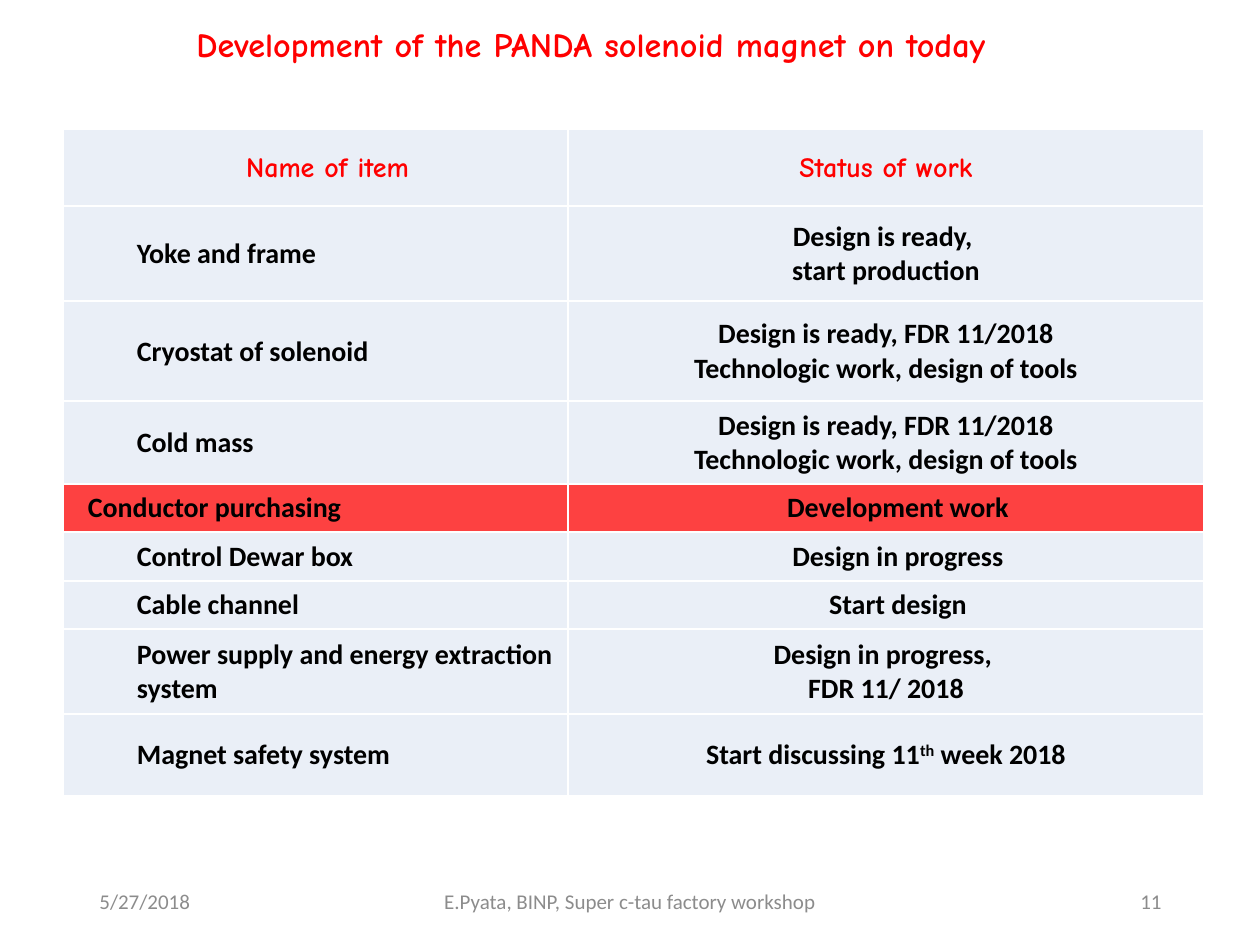
from lxml import etree
from pptx import Presentation
from pptx.dml.color import RGBColor
from pptx.enum.text import MSO_ANCHOR, PP_ALIGN
from pptx.oxml.ns import qn
from pptx.util import Pt

PX = 914400 / 126
RED = RGBColor(0xFF, 0x00, 0x00)
ALERT = RGBColor(0xFD, 0x41, 0x41)
PALE = RGBColor(0xEA, 0xEF, 0xF7)
BLACK = RGBColor(0x00, 0x00, 0x00)
GREY = RGBColor(0x8C, 0x8C, 0x8C)
LEFT, MID, RIGHT = PP_ALIGN.LEFT, PP_ALIGN.CENTER, PP_ALIGN.RIGHT
MIDDLE, TOP = MSO_ANCHOR.MIDDLE, MSO_ANCHOR.TOP
BODY, HAND = "Calibri", "Comic Neue"

COLS = [505, 636]
INSET, INDENT = 25, 49
TOOLS = "Design is ready, FDR 11/2018\nTechnologic work, design of tools"
# height, item, status, left inset of the status cell
ROWS = [
    (77, "Name of item", "Status of work", 1),
    (95, "Yoke and frame", "Design is ready, \nstart production", 1),
    (100, "Cryostat of solenoid", TOOLS, 1),
    (83, "Cold mass", TOOLS, 1),
    (48, "Conductor purchasing", "Development work", INSET),
    (49, "Control Dewar box", "Design in progress", INSET),
    (48, "Cable channel", "Start design", INSET),
    (85, "Power supply and energy extraction system",
     "Design in progress, \nFDR 11/ 2018", 1),
    (82, "Magnet safety system", "Start discussing 11^th^ week 2018", 1),
]
HEAD, URGENT = 0, 4


def px(n):
    return round(n * PX)


def style(para, size, color, face=BODY, bold=False, align=LEFT):
    para.alignment = align
    font = para.font
    font.size, font.name, font.bold = Pt(size), face, bold
    font.color.rgb = color


def add_text(slide, box, text, size, color, anchor=MIDDLE, **look):
    frame = slide.shapes.add_textbox(*map(px, box)).text_frame
    frame.word_wrap = True
    frame.vertical_anchor = anchor
    para = frame.paragraphs[0]
    para.text = text
    style(para, size, color, **look)
    return para


def add_runs(para, text):
    """Write text into para, raising what stands between carets."""
    for i, part in enumerate(text.split("^")):
        run = para.add_run()
        run.text = part
        if i % 2:
            run._r.get_or_add_rPr().set("baseline", "30000")


def add_edges(cell):
    props = cell._tc.get_or_add_tcPr()
    for i, side in enumerate(("lnL", "lnR", "lnT", "lnB")):
        line = etree.Element(qn("a:" + side), w=str(Pt(1)))
        fill = etree.SubElement(line, qn("a:solidFill"))
        etree.SubElement(fill, qn("a:srgbClr"), val="FFFFFF")
        props.insert(i, line)


def fill_cell(cell, text, fill, inset, color, face, align, indent=0):
    cell.fill.solid()
    cell.fill.fore_color.rgb = fill
    add_edges(cell)
    cell.vertical_anchor = MIDDLE
    cell.margin_left, cell.margin_right = px(inset), px(1)
    cell.margin_top, cell.margin_bottom = px(1), 0
    frame = cell.text_frame
    for i, line in enumerate(text.split("\n")):
        para = frame.add_paragraph() if i else frame.paragraphs[0]
        add_runs(para, line)
        style(para, 16, color, face, True, align)
        if indent:
            para._p.get_or_add_pPr().set("marL", str(px(indent)))
            para._p.get_or_add_pPr().set("indent", "0")


def add_status(slide):
    high = sum(row[0] for row in ROWS)
    frame = slide.shapes.add_table(len(ROWS), len(COLS), px(63), px(129),
                                   px(sum(COLS)), px(high))
    table = frame.table
    table.first_row = table.horz_banding = False
    for col, width in zip(table.columns, COLS):
        col.width = px(width)
    for i, (height, item, status, inset) in enumerate(ROWS):
        table.rows[i].height = px(height)
        fill = ALERT if i == URGENT else PALE
        color, face = (RED, HAND) if i == HEAD else (BLACK, BODY)
        align = MID if i == HEAD else LEFT
        indent = 0 if i in (HEAD, URGENT) else INDENT
        fill_cell(table.cell(i, 0), item, fill, INSET, color, face, align,
                  indent)
        fill_cell(table.cell(i, 1), status, fill, inset, color, face, MID)


def add_footer(slide):
    for left, width, text, align in (
            (87, 284, "5/27/2018", LEFT),
            (417, 426, "E.Pyata, BINP, Super c-tau factory workshop", MID),
            (890, 284, "11", RIGHT)):
        add_text(slide, (left, 876, width, 50), text, 12, GREY, align=align)


def main():
    deck = Presentation()
    deck.slide_width, deck.slide_height = px(1260), px(945)
    slide = deck.slides.add_slide(deck.slide_layouts[6])
    add_footer(slide)
    title = add_text(slide, (184, 25, 973, 50),
                     "Development of the PANDA solenoid magnet on today",
                     19.5, RED, anchor=TOP, face=HAND, bold=True)
    title.line_spacing = 0.8
    add_status(slide)
    deck.save("out.pptx")


if __name__ == "__main__":
    main()
